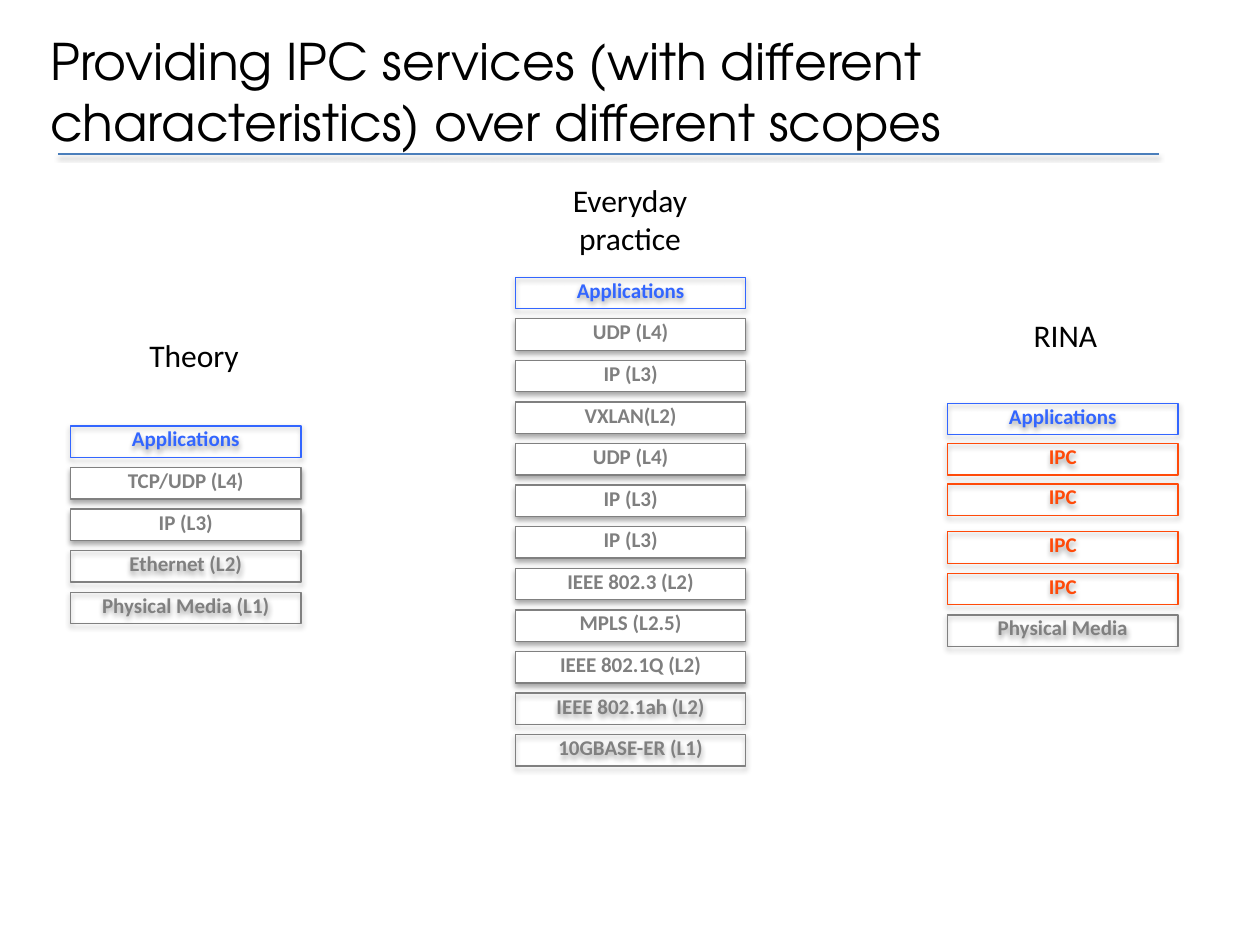
from lxml import etree
from pptx import Presentation
from pptx.dml.color import RGBColor
from pptx.enum import shapes, text
from pptx.oxml.ns import qn
from pptx.util import Inches, Pt

BLACK = RGBColor(0x00, 0x00, 0x00)
WHITE = RGBColor(0xFF, 0xFF, 0xFF)
GREY = RGBColor(0x80, 0x80, 0x80)
TEXT_GREY = RGBColor(0x7F, 0x7F, 0x7F)
BLUE = RGBColor(0x33, 0x66, 0xFF)
ORANGE = RGBColor(0xFF, 0x4A, 0x09)
RULE_BLUE = RGBColor(0x4A, 0x7E, 0xBB)

LAYER_WIDTH, LAYER_HEIGHT = 1.83, 0.25

# Each style is (fill, line, text).
APPLICATION = (None, BLUE, BLUE)
PROTOCOL = (WHITE, GREY, TEXT_GREY)
MEDIUM = (None, GREY, GREY)
IPC = (None, ORANGE, ORANGE)

THEORY = [("Applications", APPLICATION), ("TCP/UDP (L4)", PROTOCOL),
          ("IP (L3)", PROTOCOL), ("Ethernet (L2)", MEDIUM),
          ("Physical Media (L1)", MEDIUM)]
PRACTICE = [("Applications", APPLICATION), ("UDP (L4)", PROTOCOL),
            ("IP (L3)", PROTOCOL), ("VXLAN(L2)", PROTOCOL),
            ("UDP (L4)", PROTOCOL), ("IP (L3)", PROTOCOL),
            ("IP (L3)", PROTOCOL), ("IEEE 802.3 (L2)", PROTOCOL),
            ("MPLS (L2.5)", PROTOCOL), ("IEEE 802.1Q (L2)", PROTOCOL),
            ("IEEE 802.1ah (L2)", MEDIUM), ("10GBASE-ER (L1)", MEDIUM)]
RINA_UPPER = [("Applications", APPLICATION), ("IPC", IPC), ("IPC", IPC)]
RINA_LOWER = [("IPC", IPC), ("IPC", IPC), ("Physical Media", MEDIUM)]


def add_shadow(shape, distance, opacity):
    """Give a shape a soft shadow falling straight down."""
    properties = shape._element.spPr
    for old in properties.findall(qn("a:effectLst")):
        properties.remove(old)
    effects = etree.SubElement(properties, qn("a:effectLst"))
    shadow = etree.SubElement(
        effects, qn("a:outerShdw"), blurRad=str(Pt(3.1)),
        dist=str(Pt(distance)), dir="5400000", rotWithShape="0")
    color = etree.SubElement(shadow, qn("a:srgbClr"), val="000000")
    etree.SubElement(color, qn("a:alpha"), val=str(opacity * 1000))


def write(frame, words, font, size, color, bold=False, align=None):
    """Fill a text frame and format its runs."""
    frame.text = words
    for para in frame.paragraphs:
        para.alignment = align
        for span in para.runs:
            span.font.name = font
            span.font.size = Pt(size)
            span.font.bold = bold
            span.font.color.rgb = color


def add_title(page, left, top, width, height):
    """Place the title and the rule beneath it."""
    rule = page.shapes.add_connector(
        shapes.MSO_CONNECTOR.STRAIGHT, Inches(0.46), Inches(top + height),
        Inches(9.2), Inches(top + height))
    rule.line.color.rgb = RULE_BLUE
    rule.line.width = Pt(1)
    add_shadow(rule, 1.6, 38)
    box = page.shapes.add_textbox(
        Inches(left), Inches(top), Inches(width), Inches(height))
    box.text_frame.word_wrap = True
    box.text_frame.vertical_anchor = text.MSO_ANCHOR.MIDDLE
    write(box.text_frame, "Providing IPC services (with different "
          "characteristics) over different scopes",
          "TeX Gyre Adventor", 28.8, BLACK)


def add_heading(page, words, left, top, width, height):
    """Place the heading of a stack."""
    box = page.shapes.add_textbox(
        Inches(left), Inches(top), Inches(width), Inches(height))
    box.text_frame.word_wrap = False
    write(box.text_frame, words, "Calibri", 18, BLACK,
          align=text.PP_ALIGN.CENTER)


def add_layer(page, words, style, left, top):
    """Place one protocol layer."""
    fill, line, color = style
    layer = page.shapes.add_shape(
        shapes.MSO_SHAPE.RECTANGLE, Inches(left), Inches(top),
        Inches(LAYER_WIDTH), Inches(LAYER_HEIGHT))
    if fill is None:
        layer.fill.background()
    else:
        layer.fill.solid()
        layer.fill.fore_color.rgb = fill
    layer.line.color.rgb = line
    layer.line.width = Pt(0.75)
    add_shadow(layer, 1.8, 35)
    layer.text_frame.vertical_anchor = text.MSO_ANCHOR.BOTTOM
    write(layer.text_frame, words, "Calibri", 12, color, True,
          text.PP_ALIGN.CENTER)


def add_stack(page, layers, left, top, pitch=0.33):
    """Place layers one below another at an equal pitch."""
    for row, (words, style) in enumerate(layers):
        add_layer(page, words, style, left, top + row * pitch)


def main():
    """Build the slide and save it."""
    deck = Presentation()
    deck.slide_width, deck.slide_height = Inches(10), Inches(7.5)
    page = deck.slides.add_slide(deck.slide_layouts[6])
    add_title(page, 0.3, 0.22, 8.22, 1)
    add_stack(page, THEORY, 0.56, 3.38)
    add_stack(page, PRACTICE, 4.09, 2.2)
    add_stack(page, RINA_UPPER, 7.52, 3.2, 0.32)
    add_stack(page, RINA_LOWER, 7.52, 4.22)
    add_heading(page, "Theory", 1.08, 2.62, 0.92, 0.4)
    add_heading(page, "Everyday\vpractice", 4.44, 1.39, 1.12, 0.71)
    add_heading(page, "RINA", 8.1, 2.46, 0.71, 0.4)
    deck.save("out.pptx")


if __name__ == "__main__":
    main()
